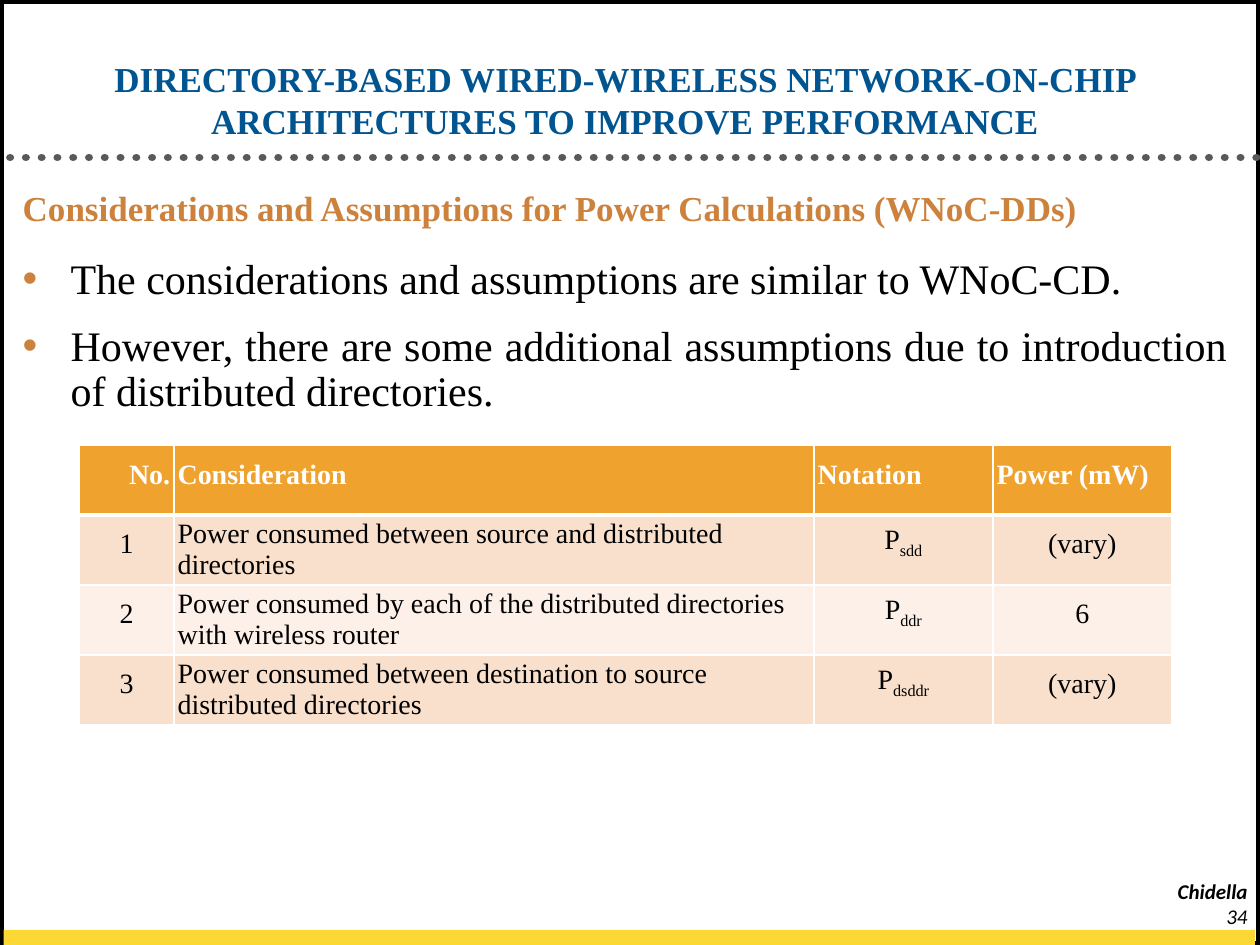
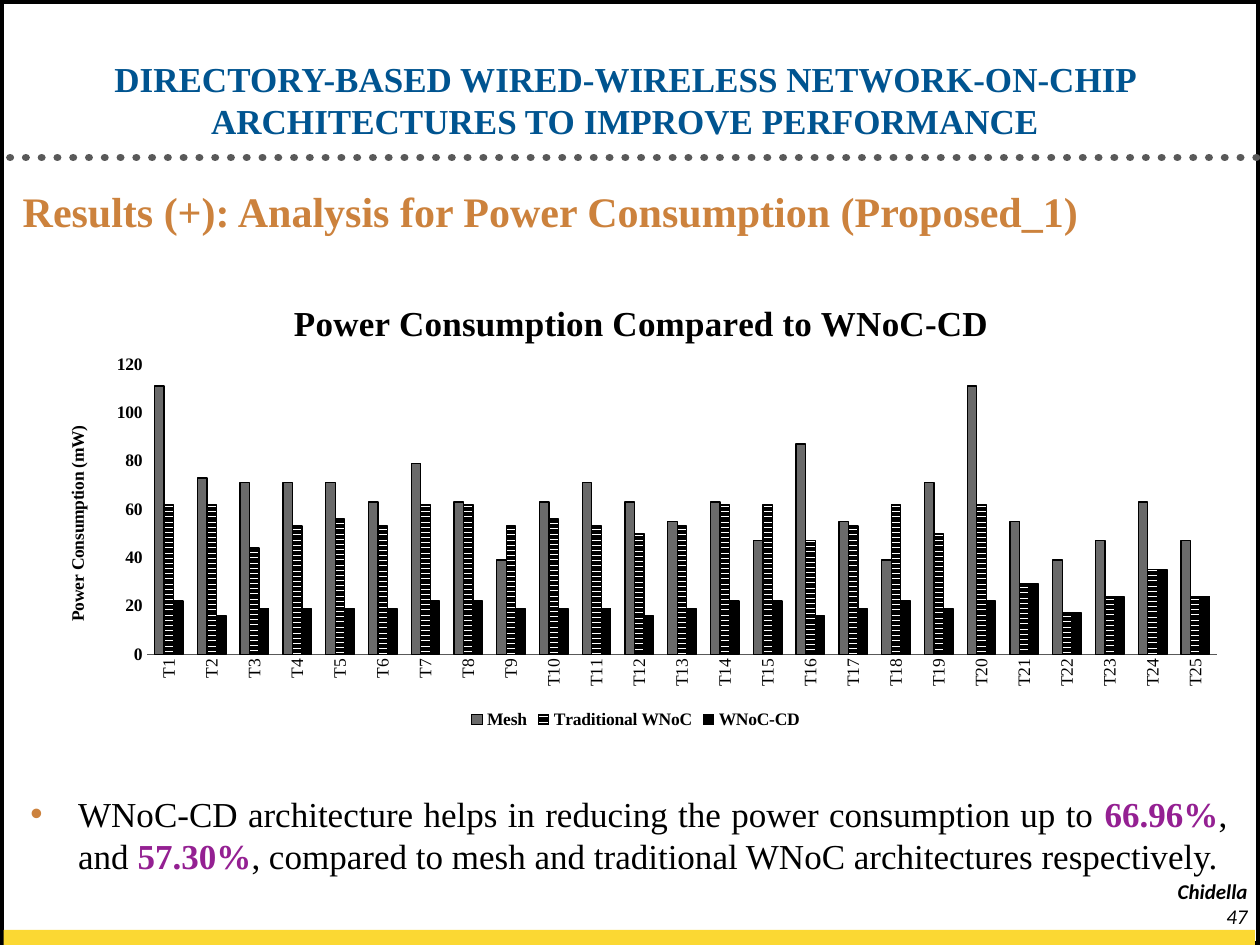
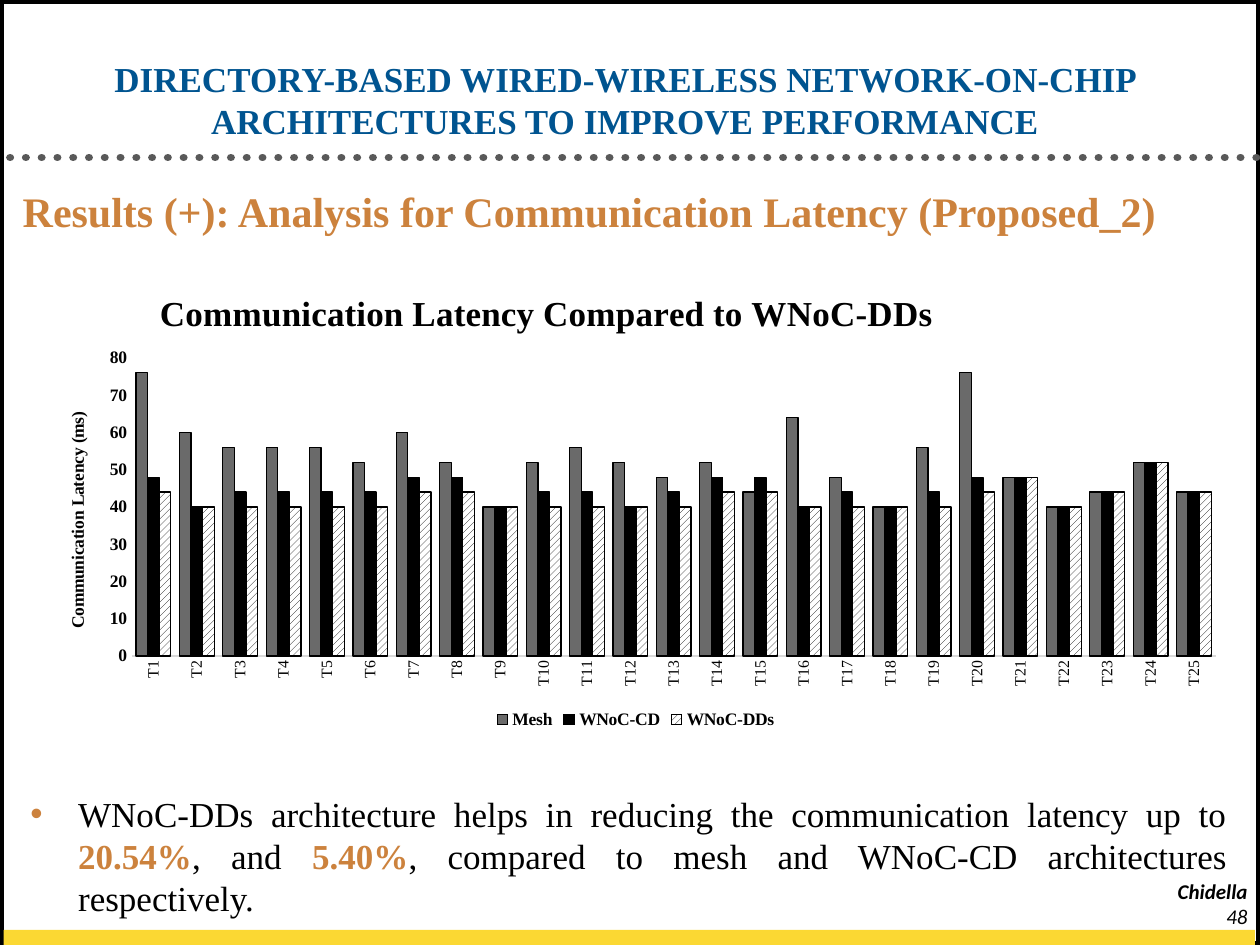
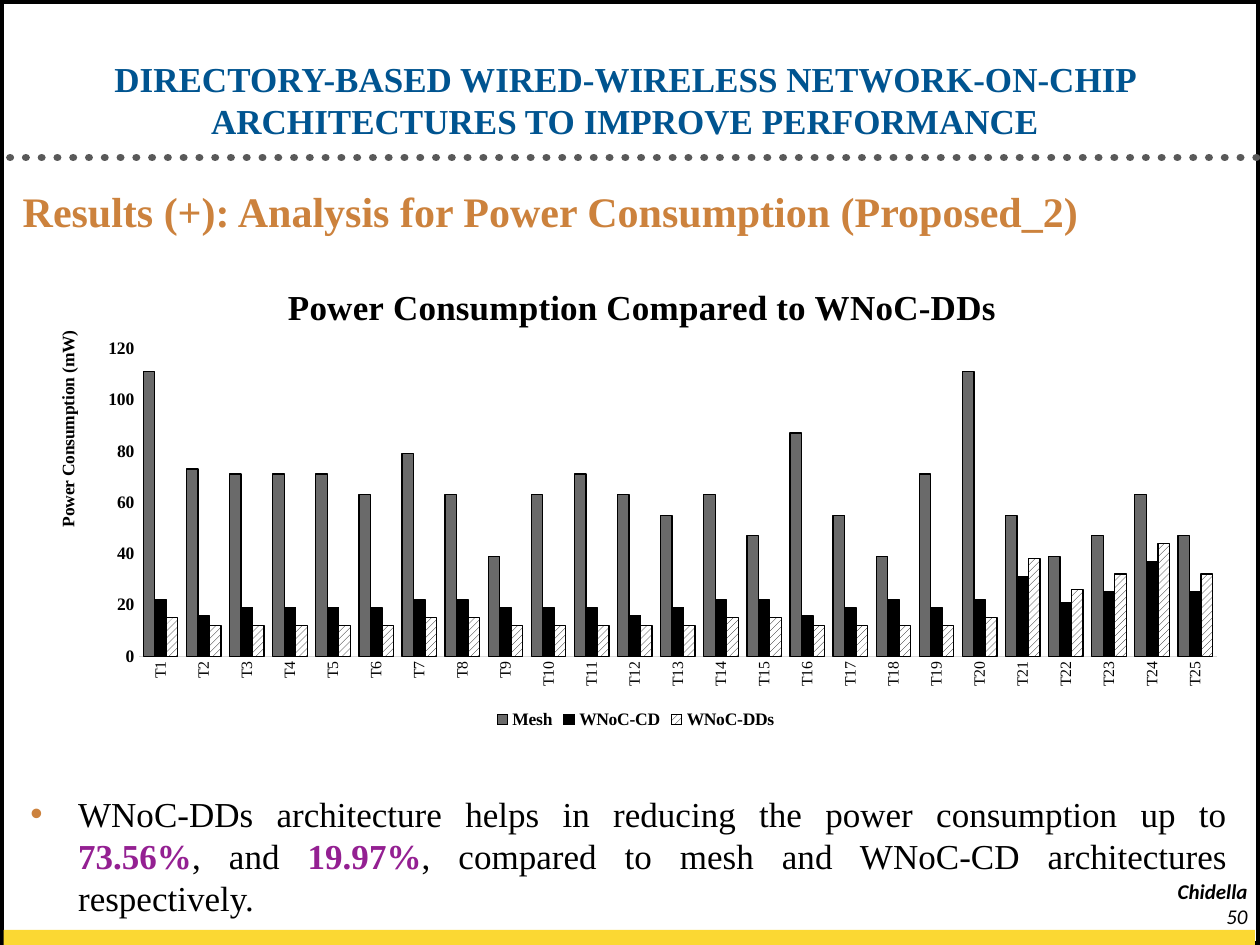
from lxml import etree
from pptx import Presentation
from pptx.chart.data import CategoryChartData
from pptx.dml.color import RGBColor
from pptx.enum.chart import XL_CHART_TYPE, XL_LEGEND_POSITION, XL_TICK_MARK
from pptx.enum.dml import MSO_LINE, MSO_PATTERN
from pptx.enum.shapes import MSO_CONNECTOR, MSO_SHAPE
from pptx.enum.text import MSO_ANCHOR, MSO_AUTO_SIZE, PP_ALIGN
from pptx.oxml.ns import qn
from pptx.util import Inches, Pt

BLACK = RGBColor(0x00, 0x00, 0x00)
WHITE = RGBColor(0xFF, 0xFF, 0xFF)
BLUE = RGBColor(0x00, 0x54, 0x90)
COPPER = RGBColor(0xCC, 0x82, 0x3D)
PURPLE = RGBColor(0x94, 0x20, 0x92)
YELLOW = RGBColor(0xFB, 0xD8, 0x33)
DOT_GRAY = RGBColor(0x59, 0x59, 0x59)
BAR_GRAY = RGBColor(0x6A, 0x6A, 0x6A)
AXIS_GRAY = RGBColor(0xD9, 0xD9, 0xD9)
HEAD_FILL = RGBColor(0xF0, 0xA2, 0x2E)
ROW_FILLS = [RGBColor(0xF9, 0xE0, 0xCD), RGBColor(0xFC, 0xF0, 0xE8)]

SERIF, SANS = "Times New Roman", "Calibri"
TITLE = ("DIRECTORY-BASED WIRED-WIRELESS NETWORK-ON-CHIP "
         "ARCHITECTURES TO IMPROVE PERFORMANCE")
LOOSE = {"alignment": PP_ALIGN.JUSTIFY, "line_spacing": 0.9, "space_after": Pt(6)}
TIGHT = {"alignment": PP_ALIGN.JUSTIFY, "space_after": Pt(0)}
SERIES_FILLS = {"Mesh": BAR_GRAY, "WNoC-CD": BLACK,
                "Traditional WNoC": MSO_PATTERN.DARK_HORIZONTAL,
                "WNoC-DDs": MSO_PATTERN.WIDE_UPWARD_DIAGONAL}

MESH_POWER = [111, 73, 71, 71, 71, 63, 79, 63, 39, 63, 71, 63, 55,
              63, 47, 87, 55, 39, 71, 111, 55, 39, 47, 63, 47]
CD_POWER = [22, 16, 19, 19, 19, 19, 22, 22, 19, 19, 19, 16, 19,
            22, 22, 16, 19, 22, 19, 22]


def set_all(obj, fmt):
    for name, value in fmt.items():
        setattr(obj, name, value)


def set_font(font, color=BLACK, **fmt):
    set_all(font, {"name": SERIF, **fmt})
    font.color.rgb = color


def add_xml(parent, tag, **attrs):
    return etree.SubElement(parent, qn(tag), attrs)


def set_bullet(p, char):
    """Give the paragraph a hanging bullet, or none if char is empty."""
    pPr = p._p.get_or_add_pPr()
    indent = Inches(0.38) if char else 0
    pPr.set("marL", str(indent))
    pPr.set("indent", str(-indent))
    if not char:
        add_xml(pPr, "a:buNone")
        return
    add_xml(add_xml(pPr, "a:buClr"), "a:srgbClr", val=str(COPPER))
    add_xml(pPr, "a:buFont", typeface="Arial")
    add_xml(pPr, "a:buChar", char=char)


def write(tf, paragraphs, para_fmt, bullet=None, **font):
    """Fill a frame; a run is a string or a (string, font changes) pair."""
    for i, runs in enumerate(paragraphs):
        p = tf.add_paragraph() if i else tf.paragraphs[0]
        if bullet is not None:
            set_bullet(p, bullet)
        set_all(p, {"space_before": Pt(6 if i else 0), **para_fmt})
        for item in runs:
            text, changes = (item, {}) if isinstance(item, str) else item
            r = p.add_run()
            r.text = text
            changes = {**font, **changes}
            baseline = changes.pop("baseline", None)
            set_font(r.font, **changes)
            if baseline:
                r._r.get_or_add_rPr().set("baseline", baseline)


def set_borders(cell, **widths):
    tcPr = cell._tc.get_or_add_tcPr()
    for side in "LRTB":
        width = Pt(widths.get(side, 1))
        ln = add_xml(tcPr, f"a:ln{side}", w=str(width))
        add_xml(add_xml(ln, "a:solidFill"), "a:srgbClr", val=str(WHITE))


def set_layout(parent, index, x, y, w=None, h=None):
    """Fix a chart part at percentages of the chart's size."""
    for old in parent.findall(qn("c:layout")):
        parent.remove(old)
    layout = parent.makeelement(qn("c:layout"))
    parent.insert(index, layout)
    manual = add_xml(layout, "c:manualLayout")
    if w:
        add_xml(manual, "c:layoutTarget", val="inner")
    add_xml(manual, "c:xMode", val="edge")
    add_xml(manual, "c:yMode", val="edge")
    for name, value in zip("xywh", (x, y, w, h)):
        if value:
            add_xml(manual, f"c:{name}", val=f"{value / 100:.3f}")


def rotate_up(element):
    for bodyPr in element.xpath(".//a:bodyPr"):
        bodyPr.set("rot", "-5400000")
        bodyPr.set("vert", "horz")


class Deck:
    """Holds the shared style and the current slide; lengths are percentages."""

    def __init__(self):
        self.prs = Presentation()
        set_all(self.prs, {"slide_width": Inches(10), "slide_height": Inches(7.5)})

    def box(self, x, y, w, h):
        width, height = self.prs.slide_width, self.prs.slide_height
        return [int(width * x / 100), int(height * y / 100),
                int(width * w / 100), int(height * h / 100)]

    def fill_placeholder(self, sp, box, paragraphs, para_fmt, anchor=MSO_ANCHOR.TOP,
                         bullet=None, **font):
        set_all(sp, dict(zip(("left", "top", "width", "height"), self.box(*box))))
        set_all(sp.text_frame, {"auto_size": MSO_AUTO_SIZE.NONE, "word_wrap": True,
                                "vertical_anchor": anchor})
        write(sp.text_frame, paragraphs, para_fmt, bullet, **font)

    def new_slide(self, number, heading, size=24):
        self.s = self.prs.slides.add_slide(self.prs.slide_layouts[3])
        self.frame(number)
        self.fill_placeholder(self.s.shapes.title, (2.5, 5.6, 94.2, 10), [[TITLE]],
                              {"alignment": PP_ALIGN.CENTER}, MSO_ANCHOR.BOTTOM,
                              size=Pt(20), bold=True, color=BLUE)
        self.fill_placeholder(self.s.placeholders[1], (0.8, 19.6, 97.6, 72.67),
                              [[heading]], LOOSE, bullet="",
                              size=Pt(size), bold=True, color=COPPER)

    def frame(self, number):
        """Draw border, dotted rule, band and footer behind the placeholders."""
        parts = [self.rect((0, 0, 100, 100), WHITE, BLACK),
                 self.footer(95, str(number)),
                 self.rule(),
                 self.rect((0.3, 98.4, 99.3, 1.6), YELLOW),
                 self.footer(92.27, "Chidella", bold=True)]
        for sp in parts:
            self.s.shapes.title._element.addprevious(sp._element)

    def rect(self, box, fill, line=None):
        sp = self.s.shapes.add_shape(MSO_SHAPE.RECTANGLE, *self.box(*box))
        sp.shadow.inherit = False
        sp.fill.solid()
        sp.fill.fore_color.rgb = fill
        if line is None:
            sp.line.fill.background()
        else:
            sp.line.color.rgb = line
            sp.line.width = Pt(4.5)
        return sp

    def rule(self):
        left, top, right, bottom = self.box(0.8, 16.67, 100, 16.67)
        sp = self.s.shapes.add_connector(MSO_CONNECTOR.STRAIGHT, left, top, right, bottom)
        sp.line.color.rgb = DOT_GRAY
        set_all(sp.line, {"width": Pt(4.5), "dash_style": MSO_LINE.ROUND_DOT})
        sp._element.spPr.find(qn("a:ln")).set("cap", "rnd")
        add_xml(sp._element.spPr, "a:effectLst")
        return sp

    def footer(self, y, text, **font):
        sp = self.s.shapes.add_textbox(*self.box(90.8, y, 9.2, 3.5))
        sp.text_frame.word_wrap = True
        write(sp.text_frame, [[text]], {"alignment": PP_ALIGN.RIGHT},
              name=SANS, size=Pt(12), italic=True, **font)
        return sp

    def bullets(self, box, paragraphs, para_fmt, size):
        self.fill_placeholder(self.s.placeholders[2], box, paragraphs, para_fmt,
                              bullet="•", size=Pt(size))

    def finding(self, start, first, second, end, color, height=10.3):
        mark = {"bold": True, "color": color}
        runs = [start, (first, mark), ", and ", (second, mark), end]
        self.bullets((1.4, 83.2, 97, height), [runs], TIGHT, 20)

    def table(self, box, widths, rows, head_aligns, body_aligns):
        table = self.s.shapes.add_table(len(rows), len(widths), *self.box(*box)).table
        for column, width in zip(table.columns, widths):
            column.width = int(self.prs.slide_width * width / 100)
        for i, row in enumerate(rows):
            for j, runs in enumerate(row):
                cell = table.cell(i, j)
                edges = {0: {"B": 3}, 1: {"T": 3}}.get(i, {})
                set_borders(cell, **edges)
                set_all(cell, {"margin_left": Inches(0.03), "margin_right": Inches(0.03),
                               "margin_top": 0, "margin_bottom": 0,
                               "vertical_anchor": MSO_ANCHOR.MIDDLE})
                cell.fill.solid()
                cell.fill.fore_color.rgb = ROW_FILLS[(i - 1) % 2] if i else HEAD_FILL
                fmt = {"alignment": (body_aligns if i else head_aligns)[j]}
                if i == 0 or j != 1:
                    fmt["line_spacing"] = Pt(11.5)
                write(cell.text_frame, [runs], fmt, size=Pt(16), bold=i == 0,
                      color=BLACK if i else WHITE)

    def chart(self, top, title, unit, series, step, maximum, plot, title_at, unit_at,
              gap=75, label_size=9, axis_color=AXIS_GRAY):
        data = CategoryChartData()
        data.categories = [f"T{n}" for n in range(1, 26)]
        for name, values in series.items():
            data.add_series(name, values)
        box = self.box(2.5, top, 95.9, 77.73 - top)
        chart = self.s.shapes.add_chart(XL_CHART_TYPE.COLUMN_CLUSTERED, *box, data).chart
        set_font(chart.font, name=SANS, size=Pt(10))

        chart.has_title = True
        write(chart.chart_title.text_frame, [[title]], {}, size=Pt(20), bold=True)
        set_layout(chart.chart_title._element, 1, *title_at)
        set_layout(chart._chartSpace.chart.plotArea, 0, *plot)

        chart.has_legend = True
        set_all(chart.legend, {"position": XL_LEGEND_POSITION.BOTTOM,
                               "include_in_layout": False})
        set_font(chart.legend.font, size=Pt(10), bold=True)

        cat, val = chart.category_axis, chart.value_axis
        set_all(cat, {"major_tick_mark": XL_TICK_MARK.NONE})
        set_font(cat.tick_labels.font, size=Pt(label_size), bold=False)
        rotate_up(cat._element)
        cat.format.line.color.rgb = axis_color
        set_all(val, {"has_major_gridlines": False, "major_tick_mark": XL_TICK_MARK.NONE,
                      "minimum_scale": 0, "maximum_scale": maximum, "major_unit": step})
        set_font(val.tick_labels.font, size=Pt(10), bold=True)
        val.format.line.fill.background()
        write(val.axis_title.text_frame, [[unit]], {}, size=Pt(10), bold=True)
        rotate_up(val.axis_title._element)
        set_layout(val.axis_title._element, 1, *unit_at)

        bars = chart.plots[0]
        set_all(bars, {"gap_width": gap, "overlap": 0, "vary_by_categories": False})
        for ser in bars.series:
            look, fill = SERIES_FILLS[ser.name], ser.format.fill
            if isinstance(look, RGBColor):
                fill.solid()
                fill.fore_color.rgb = look
            else:
                fill.patterned()
                fill.pattern = look
                fill.fore_color.rgb = BLACK
                fill.back_color.rgb = WHITE
            ser.format.line.color.rgb = BLACK
            ser.format.line.width = Pt(0.75)


def assumptions_slide(deck):
    deck.new_slide(34, "Considerations and Assumptions for Power Calculations (WNoC-DDs)", 20)
    deck.bullets((0.8, 26.67, 97.6, 20.93), [
        ["The considerations and assumptions are similar to WNoC-CD."],
        ["However, there are some additional assumptions due to introduction "
         "of distributed directories."]], LOOSE, 24)
    considerations = [
        ("Power consumed between source and distributed directories", "sdd", "(vary)"),
        ("Power consumed by each of the distributed directories with wireless router",
         "ddr", "6"),
        ("Power consumed between destination to source distributed directories",
         "dsddr", "(vary)")]
    rows = [[["No."], ["Consideration"], ["Notation"], ["Power (mW)"]]]
    for n, (text, index, power) in enumerate(considerations, 1):
        rows.append([[str(n)], [text], ["P", (index, {"baseline": "-25000"})], [power]])
    left, center = PP_ALIGN.LEFT, PP_ALIGN.CENTER
    deck.table((6.3, 47.1, 86.7, 29.6), [7.5, 50.8, 14.2, 14.2], rows,
               [PP_ALIGN.RIGHT, PP_ALIGN.JUSTIFY, left, left],
               [center, left, center, center])


def power_cd_slide(deck):
    deck.new_slide(47, "Results (+): Analysis for Power Consumption (Proposed_1)")
    wireless = [62, 62, 44, 53, 56, 53, 62, 62, 53, 56, 53, 50, 53,
                62, 62, 47, 53, 62, 50, 62, 29, 17, 24, 35, 24]
    deck.chart(28.4, "Power Consumption Compared to WNoC-CD", "Power Consumption (mW)",
               {"Mesh": MESH_POWER, "Traditional WNoC": wireless,
                "WNoC-CD": CD_POWER + [29, 17, 24, 35, 24]},
               20, 120, plot=(9.6, 20.6, 88.5, 62.2), title_at=(21.2, 5.5),
               unit_at=(2.6, 33), gap=150, label_size=10, axis_color=DOT_GRAY)
    deck.finding("WNoC-CD architecture helps in reducing the power consumption up to ",
                 "66.96%", "57.30%",
                 ", compared to mesh and traditional WNoC architectures respectively.",
                 PURPLE)


def latency_dds_slide(deck):
    deck.new_slide(48, "Results (+): Analysis for Communication Latency (Proposed_2)")
    mesh = [76, 60, 56, 56, 56, 52, 60, 52, 40, 52, 56, 52, 48,
            52, 44, 64, 48, 40, 56, 76, 48, 40, 44, 52, 44]
    central = [48, 40, 44, 44, 44, 44, 48, 48, 40, 44, 44, 40, 44,
               48, 48, 40, 44, 40, 44, 48, 48, 40, 44, 52, 44]
    distributed = [44, 40, 40, 40, 40, 40, 44, 44, 40, 40, 40, 40, 40,
                   44, 44, 40, 40, 40, 40, 44, 48, 40, 44, 52, 44]
    deck.chart(27.73, "Communication Latency Compared to WNoC-DDs",
               "Communication Latency (ms)",
               {"Mesh": mesh, "WNoC-CD": central, "WNoC-DDs": distributed},
               10, 80, plot=(8.3, 20.3, 89.7, 63.1), title_at=(10.1, 4.7),
               unit_at=(2.6, 31))
    deck.finding("WNoC-DDs architecture helps in reducing the communication latency up to ",
                 "20.54%", "5.40%",
                 ", compared to mesh and WNoC-CD architectures respectively.",
                 COPPER, height=14.8)


def power_dds_slide(deck):
    deck.new_slide(50, "Results (+): Analysis for Power Consumption (Proposed_2)")
    distributed = [15, 12, 12, 12, 12, 12, 15, 15, 12, 12, 12, 12, 12,
                   15, 15, 12, 12, 12, 12, 15, 38, 26, 32, 44, 32]
    deck.chart(26.67, "Power Consumption Compared to WNoC-DDs", "Power Consumption (mW)",
               {"Mesh": MESH_POWER, "WNoC-CD": CD_POWER + [31, 21, 25, 37, 25],
                "WNoC-DDs": distributed},
               20, 120, plot=(8.9, 20, 89.2, 63.8), title_at=(20.7, 5.5),
               unit_at=(1.8, 15.7))
    deck.finding("WNoC-DDs architecture helps in reducing the power consumption up to ",
                 "73.56%", "19.97%",
                 ", compared to mesh and WNoC-CD architectures respectively.", PURPLE)


def main():
    deck = Deck()
    for build in (assumptions_slide, power_cd_slide, latency_dds_slide, power_dds_slide):
        build(deck)
    deck.prs.save("out.pptx")


if __name__ == "__main__":
    main()
